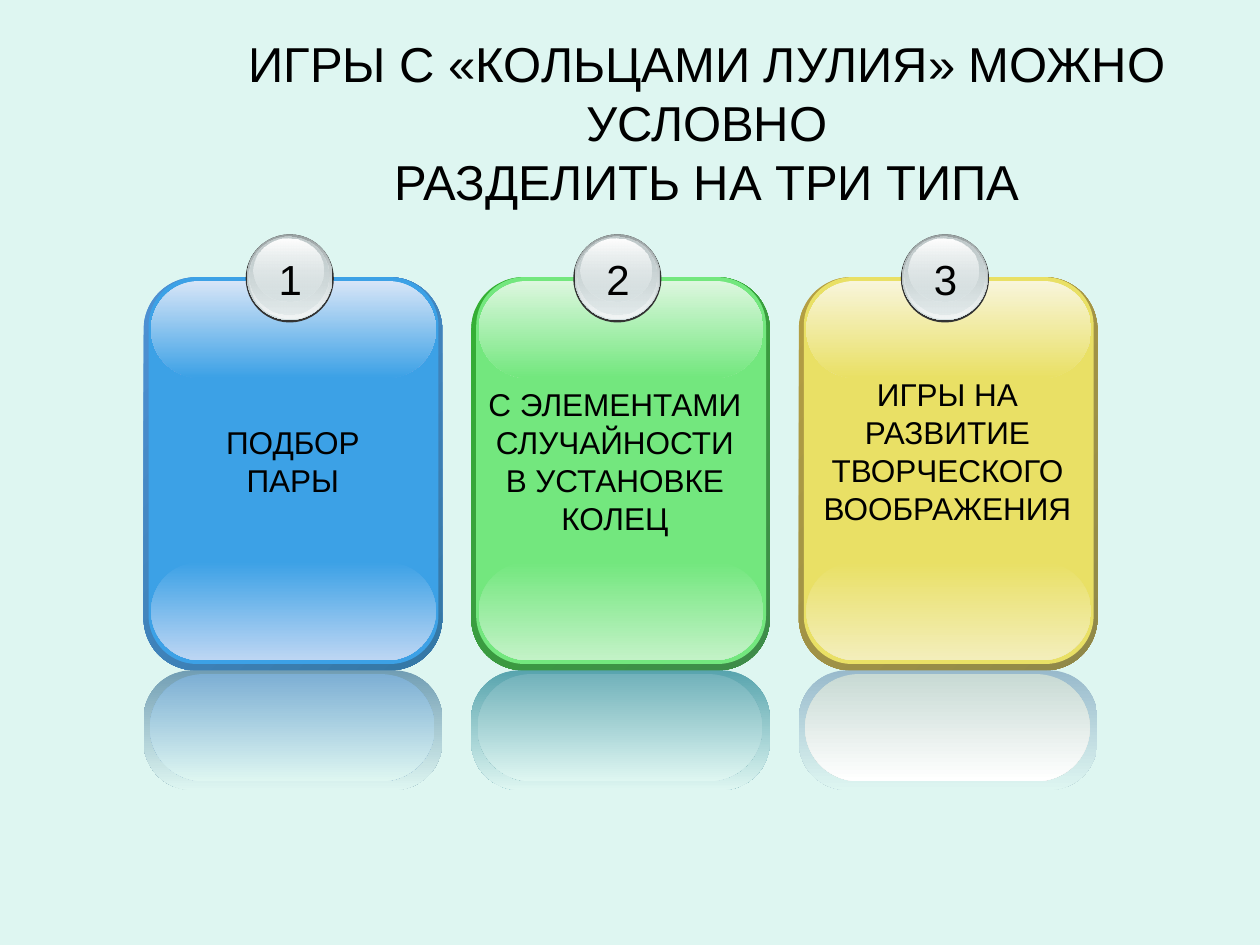
from lxml import etree
from pptx import Presentation
from pptx import util as u
from pptx.dml.color import RGBColor
from pptx.enum import shapes, text
from pptx.oxml.ns import qn

COLORS = {
    "background": "DEF6F1", "text": "000000", "white": "FFFFFF",
    "rim": "333333", "steel": "99A1A2", "silver": "D6E1E2",
    "ash": "C1CBCC", "pearl": "F2F5F5",
}
FIRST_COLUMN, COLUMN_STEP = 1.14, 2.6

# label and its left offset, top, width, height; then the colours of the card
CARDS = [
    {"label": "ПОДБОР ПАРЫ", "box": (0.32, 3.31, 1.73, 0.72),
     "edge": ("4E91D4", "3477A4"), "face": "3CA1E6",
     "top": "D7E5F7", "bottom": "BDD6F3",
     "outer": ("729EB4", "DEF6F1"), "inner": ("7DAFD4", "DEF6F1")},
    {"label": "С ЭЛЕМЕНТАМИ СЛУЧАЙНОСТИ В УСТАНОВКЕ КОЛЕЦ",
     "box": (0, 3.01, 2.28, 1.32),
     "edge": ("34B034", "3F8B4A"), "face": "73E77E",
     "top": "DDF7DF", "bottom": "C3F2C7",
     "outer": ("58A4AE", "DEF6F1"), "inner": ("72B2BB", "DEF6F1")},
    {"label": "ИГРЫ НА РАЗВИТИЕ ТВОРЧЕСКОГО ВООБРАЖЕНИЯ",
     "box": (0.08, 2.93, 2.2, 1.32),
     "edge": ("B59F43", "8F8849"), "face": "E9E065",
     "top": "F8F5DB", "bottom": "F3EEBB",
     "outer": ("99BACC", "DEF6F1"), "inner": ("C8DAD4", "FFFFFF")},
]
# left offset, top, width, height, colours, opacity of each colour in percent
BADGE = [
    (0.81, 1.86, 0.7, 0.7, ("rim",), (100,)),
    (0.82, 1.86, 0.68, 0.68, ("steel", "silver"), (100, 100)),
    (0.83, 1.87, 0.66, 0.66, ("silver", "pearl"), (0, 100)),
    (0.84, 1.88, 0.63, 0.62, ("ash", "silver"), (100, 48)),
    (0.87, 1.89, 0.56, 0.5, ("white", "silver"), (100, 38)),
]


def add_panel(parent, box, colors, radius=None, angle=90, opacity=(100, 100)):
    """Add a rounded panel, or an ellipse without radius; two colours make a gradient."""
    kind = shapes.MSO_SHAPE.OVAL if radius is None else shapes.MSO_SHAPE.ROUNDED_RECTANGLE
    shape = parent.shapes.add_shape(kind, *map(u.Inches, box))
    if radius is not None:
        shape.adjustments[0] = radius
    shape.shadow.inherit = False
    shape.line.fill.background()
    if len(colors) == 1:
        shape.fill.solid()
        shape.fill.fore_color.rgb = RGBColor.from_string(colors[0])
        return
    shape.fill.gradient()
    shape.fill.gradient_angle = 360 - angle
    for stop, color, percent in zip(shape.fill.gradient_stops, colors, opacity):
        stop.color.rgb = RGBColor.from_string(color)
    for element, percent in zip(shape._element.spPr.iter(qn("a:srgbClr")), opacity):
        if percent < 100:
            etree.SubElement(element, qn("a:alpha")).set("val", str(percent * 1000))


def write_text(shape, content, size, wrap=True, anchor=text.MSO_ANCHOR.TOP):
    frame = shape.text_frame
    frame.word_wrap = wrap
    frame.auto_size = text.MSO_AUTO_SIZE.NONE
    frame.vertical_anchor = anchor
    frame.text = content
    paragraph = frame.paragraphs[0]
    paragraph.alignment = text.PP_ALIGN.CENTER
    for run in paragraph.runs:
        run.font.size = u.Pt(size)
        run.font.name = "Arial"
        run.font.color.rgb = RGBColor.from_string(COLORS["text"])


presentation = Presentation()
presentation.slide_width, presentation.slide_height = u.Inches(10), u.Inches(7.5)
slide = presentation.slides.add_slide(presentation.slide_layouts[5])
slide.background.fill.solid()
slide.background.fill.fore_color.rgb = RGBColor.from_string(COLORS["background"])

title = slide.shapes.title
title.left, title.top, title.width, title.height = map(u.Inches, (1.22, 0.3, 8.78, 1.34))
write_text(title, "ИГРЫ С «КОЛЬЦАМИ ЛУЛИЯ» МОЖНО УСЛОВНО\vРАЗДЕЛИТЬ НА ТРИ ТИПА", 28,
           anchor=text.MSO_ANCHOR.MIDDLE)

for index, card in enumerate(CARDS):
    left = FIRST_COLUMN + index * COLUMN_STEP
    group = slide.shapes.add_group_shape()
    face = card["face"]

    add_panel(group, (left, 2.2, 2.37, 3.12), card["edge"], 0.175, angle=45)
    add_panel(group, (left + 0.04, 2.2, 2.3, 3.07), (face,), 0.167)
    add_panel(group, (left + 0.06, 4.46, 2.26, 0.78), (face, card["bottom"]), 0.5)
    add_panel(group, (left + 0.06, 2.23, 2.26, 0.77), (card["top"], face), 0.5)
    add_panel(group, (left, 5.32, 2.37, 0.95), card["outer"], 0.404)
    add_panel(group, (left + 0.05, 5.35, 2.26, 0.85), card["inner"], 0.5)

    for offset, top, width, height, names, opacity in BADGE:
        add_panel(group, (left + offset, top, width, height),
                  [COLORS[name] for name in names], opacity=opacity)
    number = group.shapes.add_textbox(*map(u.Inches, (left + 0.97, 1.96, 0.39, 0.5)))
    write_text(number, str(index + 1), 24, wrap=False)

    offset, top, width, height = card["box"]
    label = slide.shapes.add_textbox(*map(u.Inches, (left + offset, top, width, height)))
    write_text(label, card["label"], 18)

presentation.save("out.pptx")
